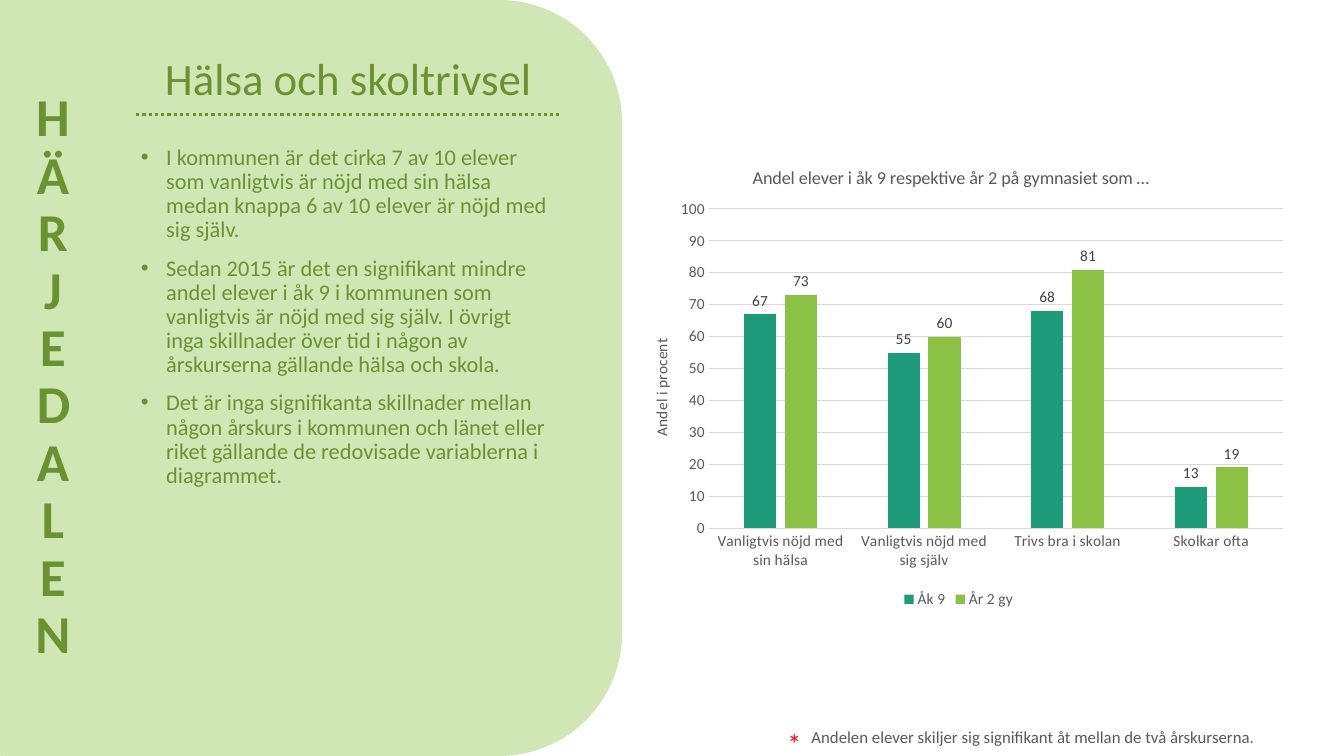
from dataclasses import dataclass

from lxml import etree
from pptx import Presentation
from pptx import util as u
from pptx.chart import data as chart_data
from pptx.dml import color
from pptx.enum import chart as charts, dml, shapes, text
from pptx.oxml import ns

FONT = "Calibri"
GREEN, PALE = "699331", "D1E6B5"
GREY, RULE, LABEL = "595959", "D9D9D9", "404040"


@dataclass
class Style:
    size: float
    color: str
    bold: bool = False


@dataclass
class Label:
    text: str
    left: float
    top: float
    width: float
    height: float
    style: Style


@dataclass
class Series:
    name: str
    values: tuple[int, ...]
    color: str


LABELS = [
    Label("*", 7.71, 7.16, 0.48, 0.69, Style(20, "FF0000")),
    Label("Andelen elever skiljer sig signifikant åt mellan de två årskurserna.",
          7.95, 7.16, 4.71, 0.3, Style(12, GREY)),
]
BULLETS = [
    "I kommunen är det cirka 7 av 10 elever som vanligtvis är nöjd med sin hälsa "
    "medan knappa 6 av 10 elever är nöjd med sig själv.",
    "Sedan 2015 är det en signifikant mindre andel elever i åk 9 i kommunen som "
    "vanligtvis är nöjd med sig själv. I övrigt inga skillnader över tid i någon av "
    "årskurserna gällande hälsa och skola.",
    "Det är inga signifikanta skillnader mellan någon årskurs i kommunen och länet "
    "eller riket gällande de redovisade variablerna i diagrammet.",
]
CATEGORIES = ["Vanligtvis nöjd med sin hälsa", "Vanligtvis nöjd med sig själv",
              "Trivs bra i skolan", "Skolkar ofta"]
SERIES = [
    Series("Åk 9", (67, 55, 68, 13), "1D9A78"),
    Series("År 2 gy", (73, 60, 81, 19), "8BC145"),
]


def rgb(value: str) -> color.RGBColor:
    return color.RGBColor.from_string(value)


def inches(*values: float) -> list[u.Length]:
    return [u.Inches(value) for value in values]


def set_font(font, style: Style) -> None:
    font.name = FONT
    font.size = u.Pt(style.size)
    font.bold = style.bold
    font.color.rgb = rgb(style.color)


def format_paragraph(para, style: Style, align=text.PP_ALIGN.LEFT, spacing=None) -> None:
    para.alignment = align
    para.line_spacing = spacing
    for span in para.runs:
        set_font(span.font, style)


def add_block(page, kind, left: float, top: float, width: float, height: float):
    block = page.shapes.add_shape(kind, *inches(left, top, width, height))
    block.shadow.inherit = False
    block.fill.solid()
    block.fill.fore_color.rgb = rgb(PALE)
    block.line.fill.background()
    return block


def add_label(page, label: Label):
    box = page.shapes.add_textbox(
        *inches(label.left, label.top, label.width, label.height))
    box.text_frame.word_wrap = True
    box.text_frame.text = label.text
    format_paragraph(box.text_frame.paragraphs[0], label.style)
    return box


def add_title(page) -> None:
    title = page.shapes.title
    title.left, title.top, title.width, title.height = inches(1.09, 0.36, 4.73, 0.89)
    frame = title.text_frame
    frame.text = "Hälsa och skoltrivsel"
    frame.auto_size = text.MSO_AUTO_SIZE.NONE
    frame.vertical_anchor = text.MSO_ANCHOR.MIDDLE
    format_paragraph(frame.paragraphs[0], Style(32, GREEN), text.PP_ALIGN.CENTER, 0.9)


def add_municipality(page) -> None:
    style = Style(38, GREEN, True)
    box = add_label(page, Label("HÄRJEDALEN", 0, -0.11, 1.05, 7.72, style))
    frame = box.text_frame
    frame.vertical_anchor = text.MSO_ANCHOR.BOTTOM
    frame._txBody.bodyPr.set("vert", "wordArtVert")
    format_paragraph(frame.paragraphs[0], style, text.PP_ALIGN.CENTER, 0.9)


def add_bullets(page) -> None:
    frame = add_block(page, shapes.MSO_SHAPE.RECTANGLE, 1.3, 1.4, 4.25, 5.59).text_frame
    frame.word_wrap = True
    frame.vertical_anchor = text.MSO_ANCHOR.TOP
    frame.text = "\n".join(BULLETS)
    for para in frame.paragraphs:
        format_paragraph(para, Style(16, GREEN), spacing=0.9)
        para.space_before = u.Pt(10)
        props = para._p.get_or_add_pPr()
        props.set("marL", str(u.Inches(0.25)))
        props.set("indent", str(-u.Inches(0.25)))
        etree.SubElement(props, ns.qn("a:buFont")).set("typeface", "Arial")
        etree.SubElement(props, ns.qn("a:buChar")).set("char", "•")


def add_dotted_rule(page) -> None:
    rule = page.shapes.add_connector(
        shapes.MSO_CONNECTOR.STRAIGHT, *inches(1.35, 1.14, 5.56, 1.14))
    rule.line.color.rgb = rgb(GREEN)
    rule.line.width = u.Pt(2.25)
    rule.line.dash_style = dml.MSO_LINE.ROUND_DOT
    etree.SubElement(rule._element.spPr, ns.qn("a:effectLst"))


def place(element, **fractions: float) -> None:
    for old in element.findall(ns.qn("c:layout")):
        element.remove(old)
    layout = etree.Element(ns.qn("c:layout"))
    manual = etree.SubElement(layout, ns.qn("c:manualLayout"))
    settings = {"xMode": "edge", "yMode": "edge", **fractions}
    if "w" in fractions:
        settings = {"layoutTarget": "inner", **settings}
    for name, value in settings.items():
        etree.SubElement(manual, ns.qn(f"c:{name}")).set("val", str(value))
    element.insert(0 if element.find(ns.qn("c:tx")) is None else 1, layout)


def add_caption(owner, words: str, size: float, x: float, y: float) -> None:
    title = owner.chart_title if hasattr(owner, "chart_title") else owner.axis_title
    title.text_frame.text = words
    format_paragraph(title.text_frame.paragraphs[0], Style(size, GREY), text.PP_ALIGN.CENTER)
    place(title._element, x=x, y=y)


def set_rule(line) -> None:
    line.color.rgb = rgb(RULE)
    line.width = u.Pt(0.75)


def add_survey_chart(page) -> None:
    data = chart_data.CategoryChartData(number_format="0")
    data.categories = CATEGORIES
    for series in SERIES:
        data.add_series(series.name, series.values)
    chart = page.shapes.add_chart(charts.XL_CHART_TYPE.COLUMN_CLUSTERED,
                                  *inches(6.16, 1.42, 6.7, 4.66), data).chart
    set_font(chart.font, Style(11, GREY))
    add_caption(chart, "Andel elever i åk 9 respektive år 2 på gymnasiet som …", 13, 0.19, 0.04)
    place(chart._chartSpace.chart.plotArea, x=0.13, y=0.14, w=0.85, h=0.68)
    chart.has_legend = True
    chart.legend.position = charts.XL_LEGEND_POSITION.BOTTOM
    chart.legend.include_in_layout = False
    set_font(chart.legend.font, Style(11, GREY))

    for axis in (chart.category_axis, chart.value_axis):
        axis.major_tick_mark = axis.minor_tick_mark = charts.XL_TICK_MARK.NONE
        set_font(axis.tick_labels.font, Style(11, GREY))
    set_rule(chart.category_axis.format.line)
    values = chart.value_axis
    values.minimum_scale, values.maximum_scale, values.major_unit = 0, 100, 10
    values.format.line.fill.background()
    set_rule(values.major_gridlines.format.line)
    add_caption(values, "Andel i procent", 11, 0.04, 0.41)

    plot = chart.plots[0]
    plot.gap_width, plot.overlap, plot.vary_by_categories = 219, -27, False
    for bars, series in zip(plot.series, SERIES):
        bars.format.fill.solid()
        bars.format.fill.fore_color.rgb = rgb(series.color)
        labels = bars.data_labels
        labels.show_value = True
        labels.position = charts.XL_LABEL_POSITION.OUTSIDE_END
        set_font(labels.font, Style(11, LABEL))


def main() -> None:
    deck = Presentation()
    deck.slide_width, deck.slide_height = inches(13.33, 7.5)
    page = deck.slides.add_slide(deck.slide_layouts[5])
    panel = add_block(page, shapes.MSO_SHAPE.ROUNDED_RECTANGLE, -1.14, 0, 7.31, 7.5)
    page.shapes._spTree.insert(2, panel._element)
    add_title(page)
    add_municipality(page)
    add_bullets(page)
    add_survey_chart(page)
    add_dotted_rule(page)
    for label in LABELS:
        add_label(page, label)
    deck.save("out.pptx")


if __name__ == "__main__":
    main()
